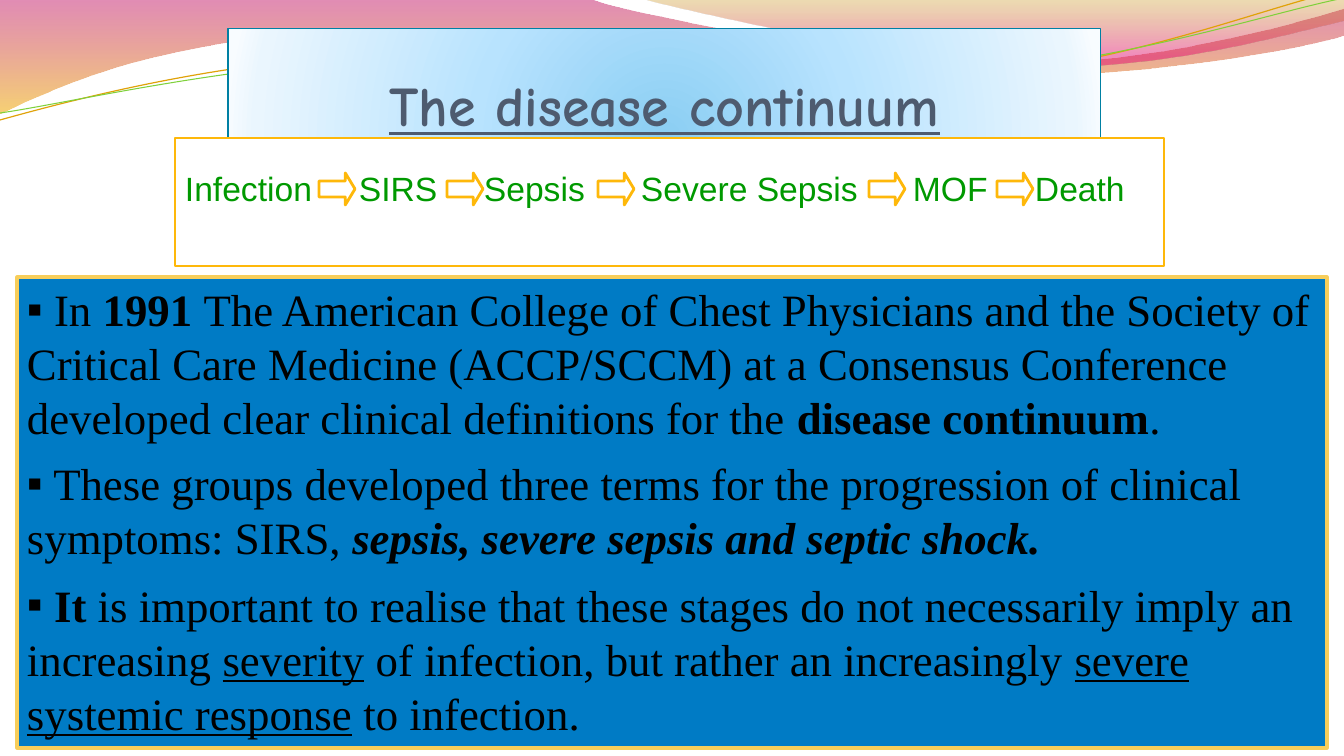
from lxml import etree
from pptx import Presentation
from pptx.dml.color import RGBColor
from pptx.enum.shapes import MSO_SHAPE
from pptx.enum.text import MSO_ANCHOR, MSO_AUTO_SIZE, PP_ALIGN
from pptx.oxml.ns import qn
from pptx.util import Pt

RECT, ARROW = MSO_SHAPE.RECTANGLE, MSO_SHAPE.RIGHT_ARROW
TOP, BOTTOM = MSO_ANCHOR.TOP, MSO_ANCHOR.BOTTOM
CENTER, LEFT = PP_ALIGN.CENTER, PP_ALIGN.LEFT
FIXED = MSO_AUTO_SIZE.NONE
PX = 9071
THEME = {
    "title": dict(size=40, font="Comic Neue", color="4E5B6F", bold=True, under=True),
    "stage": dict(size=24, font="Arial", color="009900"),
    "body": dict(size=32, font="Times New Roman", color="000000"),
    "white": "FFFFFF", "blue": "007BC5", "gold": "FEB80A", "pale": "F7CE5B",
    "teal": "0080A3", "amber": "E0A209", "green": "7FD13B",
    "ribbon": [(0, "BD0059", 45), (100, "F0AB00", 55)],
    "wave": [(0, "C38B00", 30), (80, "E1006B", 45)],
    "glow": [(0, "8BCEF3", 100), (43, "B8E3FE", 100), (93, "EAF6FE", 100), (100, "F8FCFF", 100)],
}


def write(para, text, size, font, color, bold=False, italic=False, under=False):
    run = para.add_run()
    run.text = text
    run.font.size = Pt(size)
    run.font.name = font
    run.font.color.rgb = RGBColor.from_string(color)
    run.font.bold, run.font.italic, run.font.underline = bold, italic, under


def curve(start, parts, close):
    dots = [(x * PX, y * PX) for part in parts for x, y in zip(part[::2], part[1::2])]
    pen = page.shapes.build_freeform(start[0] * PX, start[1] * PX)
    pen.add_line_segments(dots, close=close)
    shape = pen.convert_to_shape()
    shape.shadow.inherit = False
    lines = iter(list(shape.element.iter(qn("a:lnTo"))))
    for part in parts:
        first = next(lines)
        if len(part) == 6:
            trio = [first, next(lines), next(lines)]
            bend = etree.Element(qn("a:cubicBezTo"))
            first.addprevious(bend)
            for line in trio:
                bend.append(line[0])
                line.getparent().remove(line)
    return shape


deck = Presentation()
deck.slide_width, deck.slide_height = 1344 * PX, 756 * PX
page = deck.slides.add_slide(deck.slide_layouts[1])
title, body = page.placeholders

ribbon = curve((0, 0), [
    (592, 0), (639, 17, 892, 64, 1019, 64), (1147, 64, 1288, 26, 1344, 9),
    (1344, 36), (1321, 44, 1169, 77, 1002, 76), (836, 76, 513, 28, 346, 34),
    (173, 36, 61, 84, 0, 114)], True)
wave = curve((644, 0), [
    (685, 11, 916, 62, 1033, 66), (1170, 69, 1292, 32, 1344, 21), (1344, 0)], True)
for shape in (ribbon, wave):
    shape.line.fill.background()

strands = [
    ("amber", 0.85, (0, 120), [(65, 102, 213, 62, 372, 55),
     (531, 48, 796, 88, 958, 77), (1119, 67, 1262, 8, 1342, -10)]),
    ("green", 0.75, (0, 113), [(64, 104, 220, 67, 381, 59),
     (541, 53, 802, 83, 963, 73), (1124, 62, 1265, 14, 1344, -2)]),
]
for color, width, start, parts in strands:
    strand = curve(start, parts, False)
    strand.fill.background()
    strand.line.color.rgb = RGBColor.from_string(THEME[color])
    strand.line.width = Pt(width)

for holder in (body, title):
    page.shapes.element.append(holder.element)

flow = page.shapes.add_shape(RECT, 175 * PX, 138 * PX, 989 * PX, 128 * PX)
arrows = [page.shapes.add_shape(ARROW, x * PX, 173 * PX, 36 * PX, 32 * PX)
          for x in (319, 447, 598, 869, 997)]
for arrow in arrows:
    arrow.adjustments[0], arrow.adjustments[1] = 0.5, 0.303
for shape in [flow] + arrows:
    shape.shadow.inherit = False
    shape.fill.solid()
    shape.fill.fore_color.rgb = RGBColor.from_string(THEME["white"])
    shape.line.color.rgb = RGBColor.from_string(THEME["gold"])
    shape.line.width = Pt(2)

frames = [
    (title, (228, 28, 873, 110), (0, 5, 0, 0), BOTTOM),
    (body, (17, 277, 1310, 471), (10, 5, 10, 5), TOP),
    (flow, (175, 138, 989, 128), (10, 30, 10, 5), TOP),
]
for shape, box, inset, anchor in frames:
    shape.left, shape.top, shape.width, shape.height = [v * PX for v in box]
    frame = shape.text_frame
    frame.word_wrap = True
    frame.auto_size = FIXED
    frame.vertical_anchor = anchor
    (frame.margin_left, frame.margin_top,
     frame.margin_right, frame.margin_bottom) = [v * PX for v in inset]

title.line.color.rgb = RGBColor.from_string(THEME["teal"])
title.line.width = Pt(0.75)
para = title.text_frame.paragraphs[0]
para.alignment = CENTER
write(para, "The disease continuum", **THEME["title"])

down = {"ang": "5400000", "scaled": "0"}
focus = {"l": "50000", "t": "130000", "r": "50000", "b": "-30000"}
blends = [(ribbon, "ribbon", "lin"), (wave, "wave", "lin"), (title, "glow", "path")]
for shape, name, kind in blends:
    shape.fill.gradient()
    grad = shape.element.spPr.find(qn("a:gradFill"))
    grad.clear()
    grad.set("rotWithShape", "1")
    stops = etree.SubElement(grad, qn("a:gsLst"))
    for spot, color, alpha in THEME[name]:
        stop = etree.SubElement(stops, qn("a:gs"), pos=str(spot * 1000))
        tint = etree.SubElement(stop, qn("a:srgbClr"), val=color)
        etree.SubElement(tint, qn("a:alpha"), val=str(alpha * 1000))
    if kind == "lin":
        etree.SubElement(grad, qn("a:lin"), down)
    else:
        track = etree.SubElement(grad, qn("a:path"), {"path": "circle"})
        etree.SubElement(track, qn("a:fillToRect"), focus)

para = flow.text_frame.paragraphs[0]
para.alignment = LEFT
stages = ["Infection", "SIRS", "Sepsis", "Severe Sepsis", "MOF", "Death"]
write(para, "\t".join(stages), **THEME["stage"])
tabs = etree.SubElement(para._p.get_or_add_pPr(), qn("a:tabLst"))
for x in (174, 299, 456, 728, 850):
    etree.SubElement(tabs, qn("a:tab"), pos=str(x * PX), algn="l")

body.fill.solid()
body.fill.fore_color.rgb = RGBColor.from_string(THEME["blue"])
body.line.color.rgb = RGBColor.from_string(THEME["pale"])
body.line.width = Pt(2.25)
bold, under = {"bold": True}, {"under": True}
points = [
    (0, [(" In ", {}), ("1991 ", bold),
         ("The American College of Chest Physicians and the Society of Critical Care "
          "Medicine (ACCP/SCCM) at a Consensus Conference developed clear clinical "
          "definitions for the ", {}),
         ("disease continuum", bold), (".", {})]),
    (8.5, [(" These groups developed three terms for the progression of clinical "
            "symptoms: SIRS, ", {}),
           ("sepsis, severe sepsis and septic shock.", {"bold": True, "italic": True})]),
    (10, [(" ", {}), ("It ", bold),
          ("is important to realise that these stages do not necessarily imply an "
           "increasing ", {}),
          ("severity", under), (" of infection, but rather an increasingly ", {}),
          ("severe systemic response", under), (" to infection.", {})]),
]
for rank, (gap, runs) in enumerate(points):
    frame = body.text_frame
    para = frame.add_paragraph() if rank else frame.paragraphs[0]
    para.alignment = LEFT
    para.line_spacing = Pt(38.5)
    para.space_before = Pt(gap)
    props = para._p.get_or_add_pPr()
    props.set("marL", "0")
    props.set("indent", "0")
    etree.SubElement(props, qn("a:buChar"), char="▪")
    for text, style in runs:
        write(para, text, **THEME["body"], **style)

deck.save("out.pptx")
